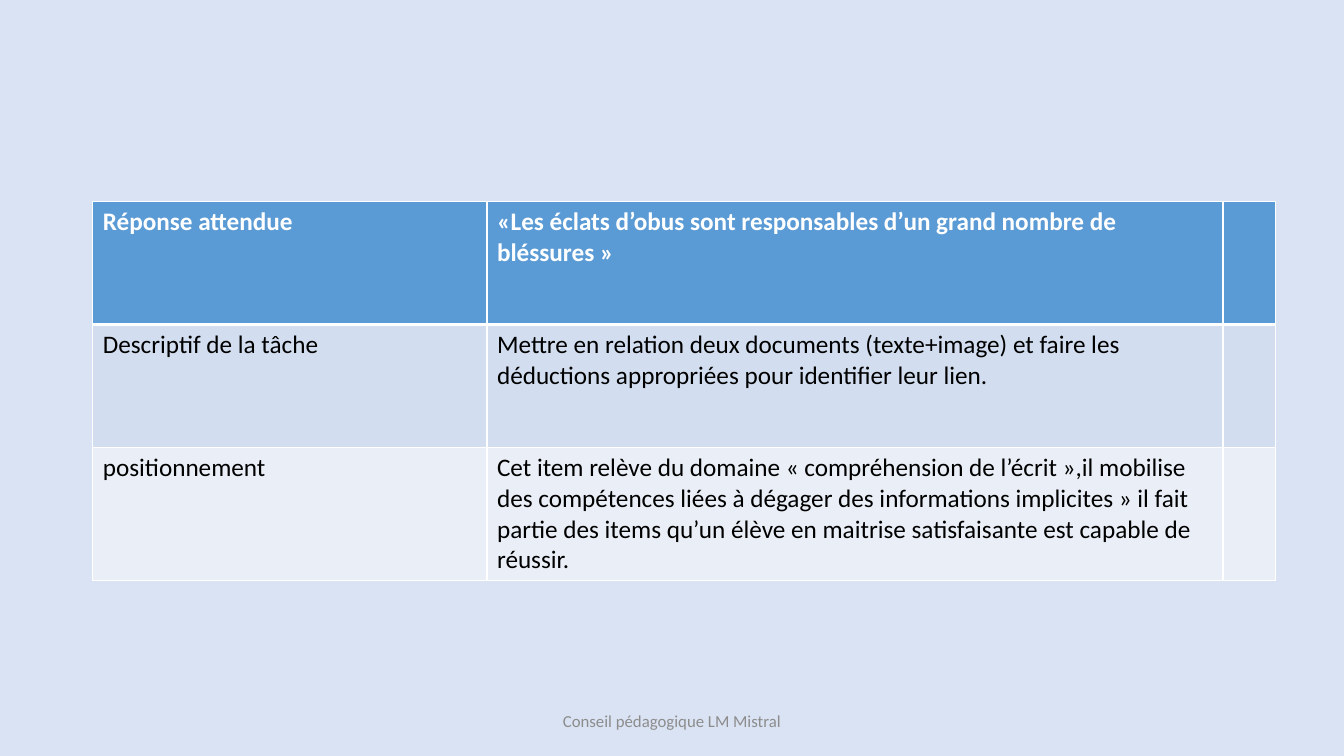
import pptx
import pptx.dml.color
import pptx.enum.text
import pptx.oxml
import pptx.oxml.ns
import pptx.util

RGBColor = pptx.dml.color.RGBColor
BACKGROUND = RGBColor(0xDA, 0xE3, 0xF3)
HEADER_BLUE = RGBColor(0x5B, 0x9B, 0xD5)
BAND_DARK = RGBColor(0xD2, 0xDE, 0xEF)
BAND_LIGHT = RGBColor(0xEA, 0xEF, 0xF7)
WHITE = RGBColor(0xFF, 0xFF, 0xFF)
BLACK = RGBColor(0, 0, 0)
FOOTER_GREY = RGBColor(0x8C, 0x8C, 0x8C)

FONT = "Calibri"
COLUMN_WIDTHS = (3.91, 7.3, 0.52)
ROW_HEIGHT = 1.22

# Each row: fill, text colour, bold, cell texts
ITEM_ROWS = (
    (HEADER_BLUE, WHITE, True, (
        "Réponse attendue",
        "«Les éclats d’obus sont responsables d’un grand nombre de bléssures »",
        "")),
    (BAND_DARK, BLACK, False, (
        "Descriptif de la tâche",
        "Mettre en relation deux documents (texte+image) et faire les "
        "déductions appropriées pour identifier leur lien.",
        "")),
    (BAND_LIGHT, BLACK, False, (
        "positionnement",
        "Cet item relève du domaine « compréhension de l’écrit »,il mobilise "
        "des compétences liées à dégager des informations implicites » il fait "
        "partie des items qu’un élève en maitrise satisfaisante est capable de "
        "réussir.",
        "")),
)


def add_run(paragraph, text, size, color, bold=False):
    run = paragraph.add_run()
    run.text = text
    run.font.name = FONT
    run.font.size = pptx.util.Pt(size)
    run.font.bold = bold
    run.font.color.rgb = color


def set_borders(cell, widths):
    """Draw white borders; widths maps a side (L, R, T, B) to points."""
    properties = cell._tc.get_or_add_tcPr()
    for position, side in enumerate("LRTB"):
        border = pptx.oxml.parse_xml(
            f'<a:ln{side} {pptx.oxml.ns.nsdecls("a")} '
            f'w="{pptx.util.Pt(widths[side])}"><a:solidFill>'
            f'<a:srgbClr val="{WHITE}"/></a:solidFill></a:ln{side}>')
        properties.insert(position, border)


def add_item_table(slide, left, top):
    width = pptx.util.Inches(sum(COLUMN_WIDTHS))
    height = pptx.util.Inches(ROW_HEIGHT * len(ITEM_ROWS))
    table = slide.shapes.add_table(
        len(ITEM_ROWS), len(COLUMN_WIDTHS), left, top, width, height).table
    for column, column_width in zip(table.columns, COLUMN_WIDTHS):
        column.width = pptx.util.Inches(column_width)
    for row_index, (fill, color, bold, texts) in enumerate(ITEM_ROWS):
        table.rows[row_index].height = pptx.util.Inches(ROW_HEIGHT)
        # A thicker rule separates the header from the body
        widths = {"L": 1, "R": 1,
                  "T": 3 if row_index == 1 else 1,
                  "B": 3 if row_index == 0 else 1}
        for column_index, text in enumerate(texts):
            cell = table.cell(row_index, column_index)
            cell.fill.solid()
            cell.fill.fore_color.rgb = fill
            set_borders(cell, widths)
            if text:
                add_run(cell.text_frame.paragraphs[0], text, 18, color, bold)


def add_footer(slide, left, top, width, height):
    frame = slide.shapes.add_textbox(left, top, width, height).text_frame
    frame.word_wrap = True
    frame.vertical_anchor = pptx.enum.text.MSO_ANCHOR.MIDDLE
    paragraph = frame.paragraphs[0]
    paragraph.alignment = pptx.enum.text.PP_ALIGN.CENTER
    add_run(paragraph, "Conseil pédagogique LM Mistral", 12, FOOTER_GREY)


def main():
    deck = pptx.Presentation()
    deck.slide_width = pptx.util.Inches(13.33)
    deck.slide_height = pptx.util.Inches(7.5)
    slide = deck.slides.add_slide(deck.slide_layouts[6])
    slide.background.fill.solid()
    slide.background.fill.fore_color.rgb = BACKGROUND

    # Item description
    add_item_table(slide, pptx.util.Inches(0.92), pptx.util.Inches(2))

    # Footer, centred on the slide
    footer_width = pptx.util.Inches(4.5)
    add_footer(slide, (deck.slide_width - footer_width) // 2,
               pptx.util.Inches(6.95), footer_width, pptx.util.Inches(0.4))

    deck.save("out.pptx")


if __name__ == "__main__":
    main()
